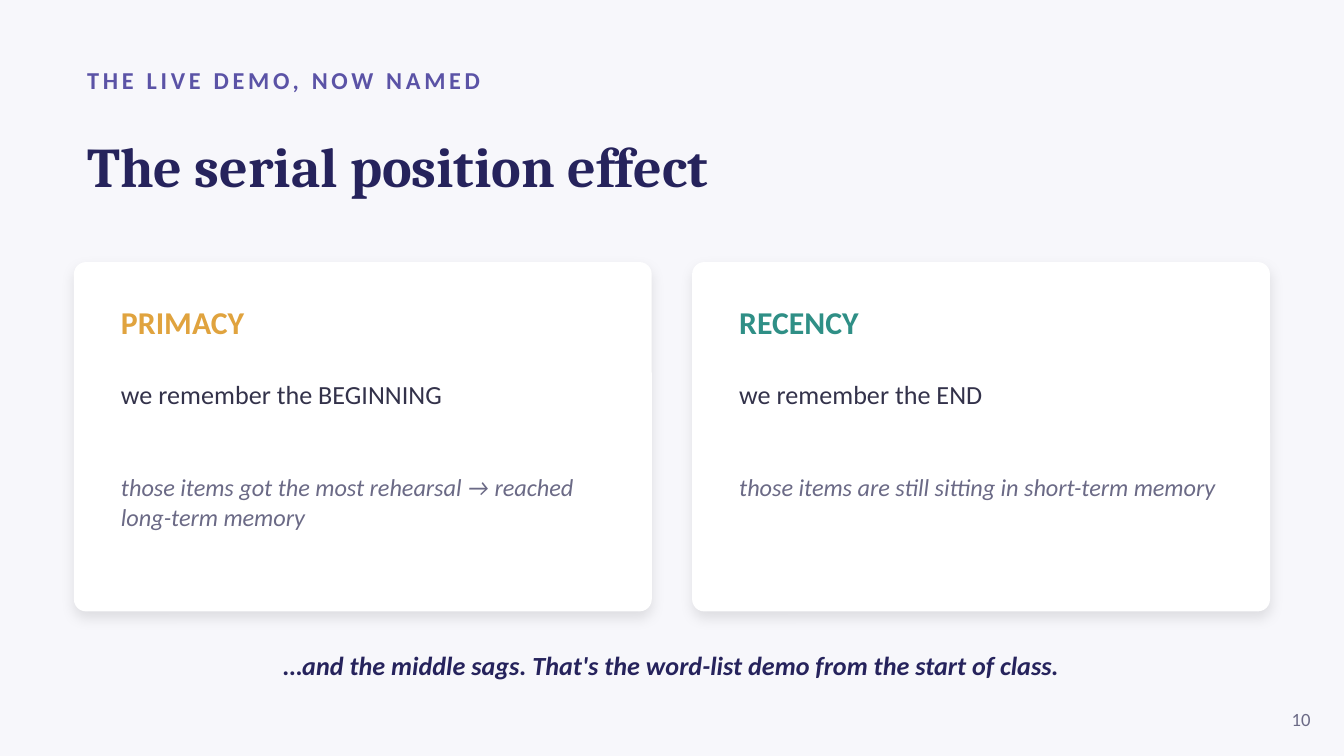
import pptx
import pptx.util
import pptx.dml.color
import pptx.enum.shapes
import pptx.enum.text
import pptx.oxml
import pptx.oxml.ns

RGBColor = pptx.dml.color.RGBColor
BACKGROUND = RGBColor(0xF7, 0xF7, 0xFB)
WHITE = RGBColor(0xFF, 0xFF, 0xFF)
NAVY = RGBColor(0x26, 0x23, 0x5C)
VIOLET = RGBColor(0x5B, 0x53, 0xA6)
AMBER = RGBColor(0xE0, 0xA3, 0x3E)
TEAL = RGBColor(0x2F, 0x8F, 0x86)
INK = RGBColor(0x33, 0x32, 0x4A)
GREY = RGBColor(0x6B, 0x6A, 0x86)

LEFT = pptx.enum.text.PP_ALIGN.LEFT
CENTER = pptx.enum.text.PP_ALIGN.CENTER
RIGHT = pptx.enum.text.PP_ALIGN.RIGHT
MIDDLE = pptx.enum.text.MSO_ANCHOR.MIDDLE
TOP = pptx.enum.text.MSO_ANCHOR.TOP

UNIT = pptx.util.Inches(0.05)
MARGIN, CARD_W, CARD_H, GAP, PAD = 11, 86, 52, 6, 5
CARD_TOP = 39
CONTENT_W = 2 * CARD_W + GAP

SHADOW = (
    '<a:effectLst %s><a:outerShdw blurRad="88900" dist="38100" dir="5400000" '
    'algn="ctr" rotWithShape="0"><a:srgbClr val="000000"><a:alpha val="10000"/>'
    "</a:srgbClr></a:outerShdw></a:effectLst>" % pptx.oxml.ns.nsdecls("a")
)


def grid(*cells):
    return [round(c * UNIT) for c in cells]


def write(sp, text, size, color, font="Calibri", bold=False, italic=False,
          align=LEFT, anchor=MIDDLE, before=0, spacing=None, bullet_off=False):
    tf = sp.text_frame
    tf.word_wrap = True
    tf.auto_size = pptx.enum.text.MSO_AUTO_SIZE.NONE
    tf.vertical_anchor = anchor
    p = tf.add_paragraph() if tf.text else tf.paragraphs[0]
    if bullet_off:
        pPr = p._p.get_or_add_pPr()
        pPr.set("marL", "0")
        pPr.set("indent", "0")
        pPr.append(pptx.oxml.parse_xml("<a:buNone %s/>" % pptx.oxml.ns.nsdecls("a")))
    p.alignment = align
    p.space_before = pptx.util.Pt(before)
    r = p.add_run()
    r.text = text
    r.font.name = font
    r.font.size = pptx.util.Pt(size)
    r.font.bold = bold
    r.font.italic = italic
    r.font.color.rgb = color
    if spacing:
        r._r.get_or_add_rPr().set("spc", str(spacing * 100))


prs = pptx.Presentation()
prs.slide_width = pptx.util.Inches(10)
prs.slide_height = prs.slide_width * 9 // 16
s = prs.slides.add_slide(prs.slide_layouts[3])
s.background.fill.solid()
s.background.fill.fore_color.rgb = BACKGROUND

kicker = s.shapes.add_textbox(*grid(MARGIN, 8.4, 180, 7))
write(kicker, "THE LIVE DEMO, NOW NAMED", 13, VIOLET, bold=True, spacing=2)

title = s.shapes.title
title.left, title.top, title.width, title.height = grid(MARGIN, 15.6, CONTENT_W, 18)
write(title, "The serial position effect", 30, NAVY, font="Cambria", bold=True)

cards = [
    ("PRIMACY", AMBER, "we remember the BEGINNING",
     "those items got the most rehearsal → reached long-term memory"),
    ("RECENCY", TEAL, "we remember the END",
     "those items are still sitting in short-term memory"),
]
for i, (heading, color, claim, reason) in enumerate(cards):
    x = MARGIN + i * (CARD_W + GAP)
    card = s.shapes.add_shape(pptx.enum.shapes.MSO_SHAPE.ROUNDED_RECTANGLE,
                              *grid(x, CARD_TOP, CARD_W, CARD_H))
    card.adjustments[0] = 0.035
    card.fill.solid()
    card.fill.fore_color.rgb = WHITE
    card.line.fill.background()
    card._element.spPr.append(pptx.oxml.parse_xml(SHADOW))

    body = s.placeholders[i + 1]
    body.left, body.top, body.width, body.height = grid(
        x + PAD, CARD_TOP + PAD, CARD_W - 2 * PAD, CARD_H - PAD - 1)
    body._element.addprevious(card._element)
    write(body, heading, 17, color, bold=True, anchor=TOP, bullet_off=True)
    write(body, claim, 14, INK, anchor=TOP, before=20.5, bullet_off=True)
    write(body, reason, 13, GREY, italic=True, anchor=TOP, before=33.5, bullet_off=True)

closing = s.shapes.add_textbox(*grid(MARGIN, 95, CONTENT_W, 8))
write(closing, "…and the middle sags. That's the word-list demo from the start of class.",
      14, NAVY, bold=True, italic=True, align=CENTER)

number = s.shapes.add_textbox(*grid(187, 104, 10, 6))
write(number, "10", 10, GREY, align=RIGHT)

prs.save("out.pptx")
